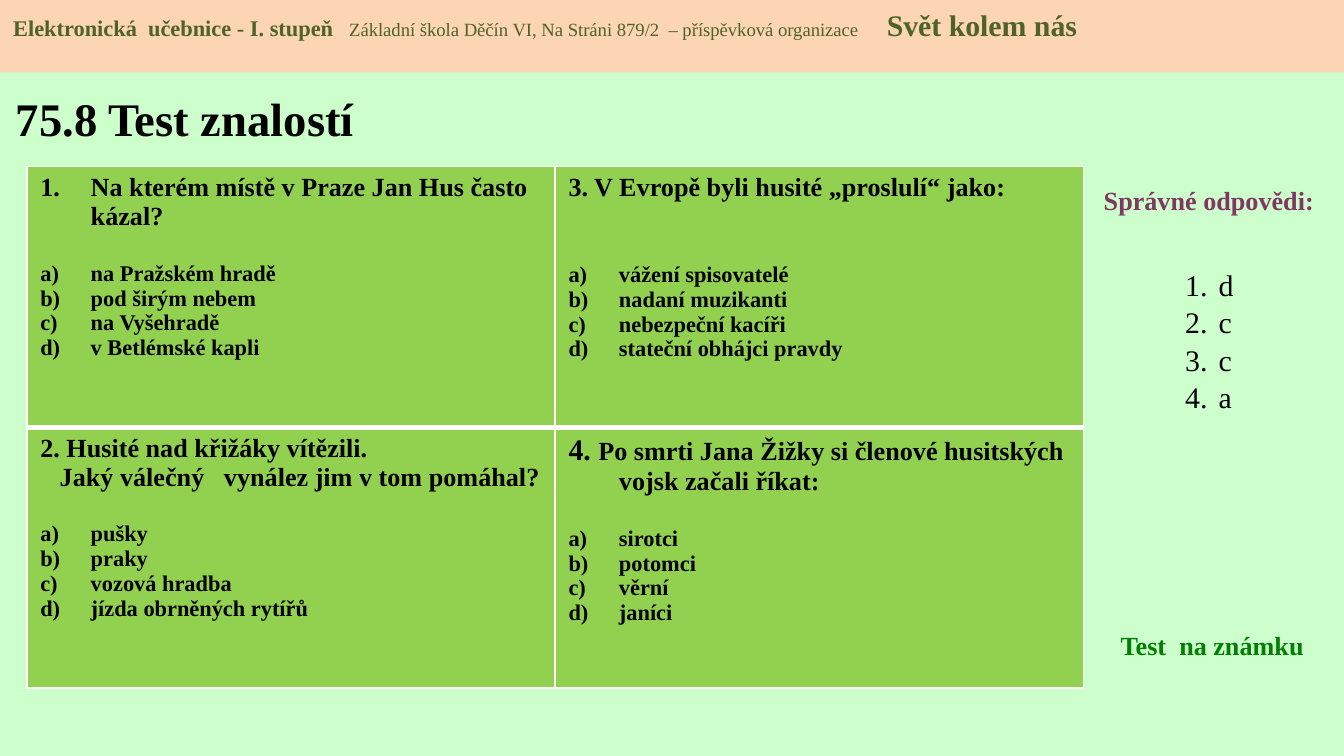
from dataclasses import dataclass
from typing import Any

from lxml import etree
from pptx import Presentation
from pptx.dml.color import RGBColor
from pptx.enum import shapes, text
from pptx.oxml import ns
from pptx.util import Length, Pt

MINT = RGBColor(0xCC, 0xFF, 0xCC)
PEACH = RGBColor(0xFC, 0xD5, 0xB5)
LIME = RGBColor(0x92, 0xD0, 0x50)
OLIVE = RGBColor(0x4F, 0x62, 0x28)
PLUM = RGBColor(0x81, 0x37, 0x63)
GREEN = RGBColor(0x00, 0x80, 0x00)
BLACK = RGBColor(0x00, 0x00, 0x00)
WHITE = "FFFFFF"

FONT = "Times New Roman"
NUMBERS, LETTERS = "arabicPeriod", "alphaLcParenR"
HANG = 27
LINE = 16.1  # height of one line of question text


@dataclass
class Span:
    words: str
    size: float
    color: RGBColor = BLACK
    bold: bool = True


@dataclass
class Para:
    spans: list[Span]
    before: float = 0
    left: float = 0
    hang: float = 0
    numbering: str = ""
    align: Any = text.PP_ALIGN.LEFT
    tabs: tuple[tuple[float, str], ...] = ()


@dataclass
class Box:
    left: float
    top: float
    width: float
    height: float
    paras: list[Para]
    anchor: Any = text.MSO_ANCHOR.TOP


@dataclass
class Question:
    heading: list[Para]
    options: list[str]
    gap: float = LINE

    def paras(self) -> list[Para]:
        return self.heading + [
            Para([Span(option, 12)], 0 if i else self.gap, HANG, HANG, LETTERS)
            for i, option in enumerate(self.options)
        ]


def write(frame: Any, paras: list[Para]) -> None:
    for i, item in enumerate(paras):
        para = frame.add_paragraph() if i else frame.paragraphs[0]
        para.alignment = item.align
        if item.before:
            para.space_before = Pt(item.before)
        props = para._p.get_or_add_pPr()
        props.set("marL", str(Pt(item.left)))
        props.set("indent", str(Pt(-item.hang)))
        if item.numbering:
            etree.SubElement(props, ns.qn("a:buAutoNum"), type=item.numbering)
        if item.tabs:
            stops = etree.SubElement(props, ns.qn("a:tabLst"))
            for place, side in item.tabs:
                etree.SubElement(stops, ns.qn("a:tab"), pos=str(Pt(place)), algn=side)
        for part in item.spans:
            span = para.add_run()
            span.text = part.words
            formats = {"name": FONT, "size": Pt(part.size), "bold": part.bold}
            for key, value in formats.items():
                setattr(span.font, key, value)
            span.font.color.rgb = part.color


def place(box: Box) -> tuple[Length, ...]:
    return Pt(box.left), Pt(box.top), Pt(box.width), Pt(box.height)


def add_text(page: Any, box: Box) -> None:
    frame = page.shapes.add_textbox(*place(box)).text_frame
    frame.word_wrap = True
    frame.vertical_anchor = box.anchor
    write(frame, box.paras)


def add_banner(page: Any, box: Box) -> None:
    banner = page.shapes.add_shape(shapes.MSO_SHAPE.RECTANGLE, *place(box))
    banner.shadow.inherit = False
    banner.fill.solid()
    banner.fill.fore_color.rgb = PEACH
    banner.line.fill.background()
    banner.text_frame.vertical_anchor = box.anchor
    write(banner.text_frame, box.paras)


def set_borders(cell: Any, widths: dict[str, float]) -> None:
    props = cell._tc.get_or_add_tcPr()
    for side, width in widths.items():
        line = etree.SubElement(props, ns.qn(f"a:ln{side}"), w=str(Pt(width)))
        fill = etree.SubElement(line, ns.qn("a:solidFill"))
        etree.SubElement(fill, ns.qn("a:srgbClr"), val=WHITE)


def add_quiz(page: Any, rows: list[list[Question]]) -> None:
    table = page.shapes.add_table(2, 2, Pt(14.4), Pt(89.3), Pt(566), Pt(279.4)).table
    for r, questions in enumerate(rows):
        table.rows[r].height = Pt(139.7)
        for c, question in enumerate(questions):
            table.columns[c].width = Pt(283)
            cell = table.cell(r, c)
            set_borders(cell, {"L": 1, "R": 1, "T": 3 if r else 1, "B": 1 if r else 3})
            cell.fill.solid()
            cell.fill.fore_color.rgb = LIME
            write(cell.text_frame, question.paras())


# Content
BANNER = Box(0, 0, 720, 38.9, [Para([
    Span("Elektronická  učebnice - I. stupeň", 12, OLIVE),
    Span("\tZákladní škola Děčín VI, Na Stráni 879/2  – příspěvková organizace\t",
         10, OLIVE, False),
    Span("Svět kolem nás", 16, OLIVE),
], tabs=((237.6, "l"), (702.5, "r")))])

TEXTS = [
    Box(1.4, 39.6, 229.7, 46.8, [Para([Span("75.8 Test znalostí", 25)])],
        text.MSO_ANCHOR.MIDDLE),
    Box(579.6, 95, 136.1, 24.5,
        [Para([Span("Správné odpovědi:", 14, PLUM)], align=text.PP_ALIGN.CENTER)]),
    Box(627.8, 139.5, 43, 85,
        [Para([Span(answer, 16, bold=False)], 0.7 if i else 0, 18, 18, NUMBERS)
         for i, answer in enumerate("dcca")]),
    Box(593.3, 333.4, 113, 24.5, [Para([Span("Test  na známku", 14, GREEN)])]),
]

QUIZ = [
    [
        Question(
            [Para([Span("Na kterém místě v Praze Jan Hus často kázal?", 14)],
                  0, HANG, HANG, NUMBERS)],
            ["na Pražském hradě", "pod širým nebem", "na Vyšehradě",
             "v Betlémské kapli"]),
        Question(
            [Para([Span("3. V Evropě byli husité „proslulí“ jako:", 14)],
                  0, HANG, HANG)],
            ["vážení spisovatelé", "nadaní muzikanti", "nebezpeční kacíři",
             "stateční obhájci pravdy"], 2 * LINE),
    ],
    [
        Question(
            [Para([Span("2. Husité nad křižáky vítězili.", 14)]),
             Para([Span("Jaký válečný   vynález jim v tom pomáhal?", 14)], left=10.4)],
            ["pušky", "praky", "vozová hradba", "jízda obrněných rytířů"]),
        Question(
            [Para([Span("4. ", 16),
                   Span("Po smrti Jana Žižky si členové husitských vojsk začali říkat:",
                        14)], 0, HANG, HANG)],
            ["sirotci", "potomci", "věrní", "janíci"]),
    ],
]


def main() -> None:
    deck = Presentation()
    deck.slide_width, deck.slide_height = Pt(720), Pt(405)
    page = deck.slides.add_slide(deck.slide_layouts[6])
    page.background.fill.solid()
    page.background.fill.fore_color.rgb = MINT

    # Quiz table, title and answers, then the banner on top
    add_quiz(page, QUIZ)
    for box in TEXTS:
        add_text(page, box)
    add_banner(page, BANNER)
    deck.save("out.pptx")


if __name__ == "__main__":
    main()
